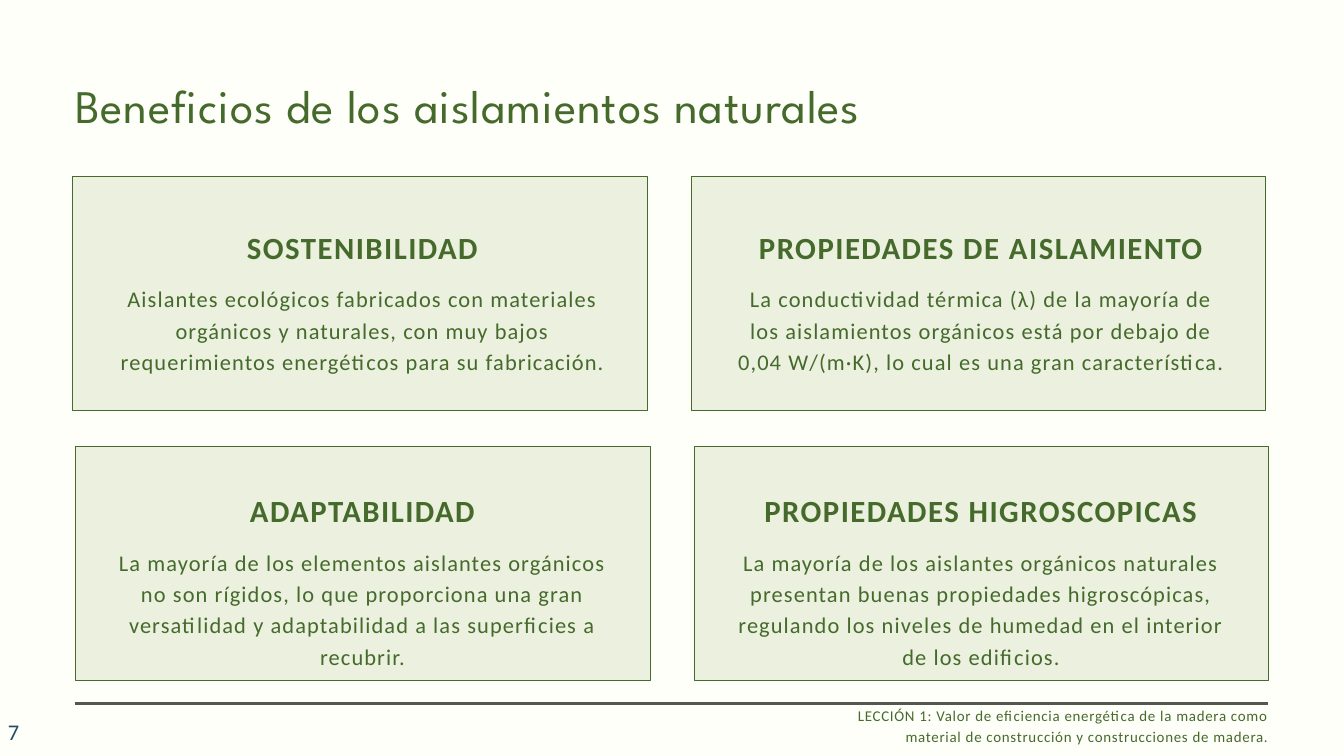
from dataclasses import dataclass

from pptx import Presentation
from pptx.dml.color import RGBColor as Rgb
from pptx.enum.shapes import MSO_SHAPE as Shape
from pptx.enum.text import MSO_ANCHOR as Anchor, MSO_AUTO_SIZE as Fit, PP_ALIGN as Align
from pptx.util import Pt


@dataclass(frozen=True)
class Theme:
    back: str = "FEFFF8"
    green: str = "456A2C"
    pale: str = "EBF1DE"
    gray: str = "52584D"
    blue: str = "1E4D65"
    head: str = "League Spartan"
    body: str = "Calibri"
    title: int = 50
    label: int = 33
    text: int = 24
    foot: int = 16


THEME = Theme()

CARDS = [
    [
        ("SOSTENIBILIDAD",
         "Aislantes ecológicos fabricados con materiales orgánicos y naturales, "
         "con muy bajos requerimientos energéticos para su fabricación."),
        ("PROPIEDADES DE AISLAMIENTO",
         "La conductividad térmica (λ) de la mayoría de los aislamientos orgánicos "
         "está por debajo de 0,04 W/(m·K), lo cual es una gran característica."),
    ],
    [
        ("ADAPTABILIDAD",
         "La mayoría de los elementos aislantes orgánicos no son rígidos, lo que "
         "proporciona una gran versatilidad y adaptabilidad a las superficies a recubrir."),
        ("PROPIEDADES HIGROSCOPICAS",
         "La mayoría de los aislantes orgánicos naturales presentan buenas propiedades "
         "higroscópicas, regulando los niveles de humedad en el interior de los edificios."),
    ],
]
ROWS = [
    {"left": 77.8, "top": 188.6, "words": 243.4},
    {"left": 80.8, "top": 478.1, "words": 525.6},
]
STEP = 662.7


def add_text(shapes, text, box, size, font=THEME.body, color=THEME.green,
             bold=False, gap=1.2, lead=None, align=Align.LEFT,
             pad=(0, 0), anchor=Anchor.TOP, fit=Fit.SHAPE_TO_FIT_TEXT):
    frame = shapes.add_textbox(*map(Pt, box)).text_frame
    frame.word_wrap = True
    frame.auto_size = fit
    frame.vertical_anchor = anchor
    frame.margin_left = frame.margin_right = Pt(pad[0])
    frame.margin_top = frame.margin_bottom = Pt(pad[1])
    para = frame.paragraphs[0]
    para.alignment = align
    if lead:
        para.line_spacing = Pt(lead)
    run = para.add_run()
    run.text = text
    run.font.name = font
    run.font.size = Pt(size)
    run.font.bold = bold
    run.font.color.rgb = Rgb.from_string(color)
    run._r.get_or_add_rPr().set("spc", str(round(gap * 100)))


def add_rect(shapes, box, fill, line=None):
    rect = shapes.add_shape(Shape.RECTANGLE, *map(Pt, box))
    rect.shadow.inherit = False
    rect.fill.solid()
    rect.fill.fore_color.rgb = Rgb.from_string(fill)
    if line:
        rect.line.color.rgb = Rgb.from_string(line)
        rect.line.width = Pt(0.75)
    else:
        rect.line.fill.background()


def add_card(shapes, label, text, row, col):
    shift = col * STEP
    left = 122.4 + shift
    add_rect(shapes, (row["left"] + shift, row["top"], 615.6, 250.6),
             THEME.pale, THEME.green)
    group = shapes.add_group_shape().shapes
    add_text(group, label, (left, row["words"], 532, 40.3), THEME.label,
             bold=True, gap=1.6, lead=41.2, align=Align.CENTER)
    add_text(group, text, (left, row["words"] + 57.6, 532, 134.6), THEME.text,
             lead=33.6, align=Align.CENTER)


def main():
    deck = Presentation()
    deck.slide_width, deck.slide_height = Pt(1440), Pt(810)
    slide = deck.slides.add_slide(deck.slide_layouts[6])
    slide.background.fill.solid()
    slide.background.fill.fore_color.rgb = Rgb.from_string(THEME.back)
    shapes = slide.shapes

    add_text(shapes, "Beneficios de los aislamientos naturales",
             (80.6, 75.6, 1095, 67.7), THEME.title, font=THEME.head, gap=1, lead=66.8)
    for row, cards in zip(ROWS, CARDS):
        for col, (label, text) in enumerate(cards):
            add_card(shapes, label, text, row, col)

    add_rect(shapes, (80.6, 752.4, 1278, 2.9), THEME.gray)
    add_text(shapes, "7", (1.4, 769.7, 167.8, 28.8), THEME.text, color=THEME.blue,
             pad=(7.2, 3.6), anchor=Anchor.MIDDLE, fit=Fit.NONE)
    add_text(shapes,
             "LECCIÓN 1: Valor de eficiencia energética de la madera como "
             "material de construcción y construcciones de madera.",
             (864, 753.8, 495.4, 43.2), THEME.foot, gap=0.8, lead=22.4, align=Align.RIGHT)
    deck.save("out.pptx")


if __name__ == "__main__":
    main()
